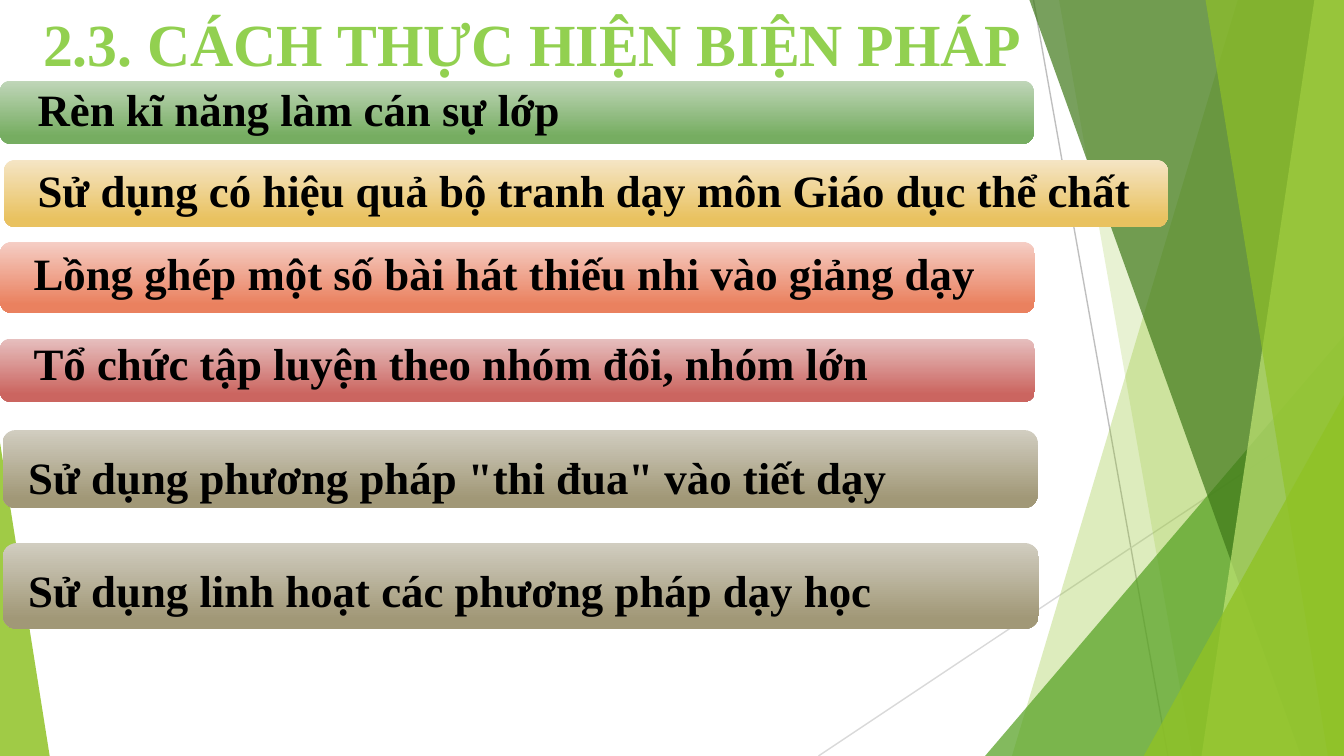
from lxml import etree
from pptx import Presentation
from pptx.dml.color import RGBColor
from pptx.enum.shapes import MSO_CONNECTOR, MSO_SHAPE
from pptx.enum.text import MSO_ANCHOR
from pptx.oxml.ns import qn
from pptx.util import Inches, Pt

STRAIGHT = MSO_CONNECTOR.STRAIGHT
TRIANGLE = MSO_SHAPE.ISOSCELES_TRIANGLE
ROUNDED = MSO_SHAPE.ROUNDED_RECTANGLE
MIDDLE = MSO_ANCHOR.MIDDLE

WIDTH = 10
HEIGHT = WIDTH * 9 / 16
FONT = "Times New Roman"
COLORS = {
    "title": "92D050", "text": "000000",
    "line": "BFBFBF", "pale_line": "D9D9D9",
    "lime": "90C226", "green": "54A021", "dark": "3F7819", "light": "C0E474",
}
GRADIENTS = {
    "green": ("C0D6B9", "76AD61"),
    "gold": ("F5E5C5", "E9C260"),
    "orange": ("F5CEC5", "EA815F"),
    "red": ("E6BFBE", "CB6560"),
    "taupe": ("D1CDC0", "A19877"),
}

# Text, gradient, bar box, left edge of the text, middle of the text line
MEASURES = [
    ("Rèn kĩ năng làm cán sự lớp", "green", (0, 0.6, 7.69, 0.47), 0.28, 0.81),
    ("Sử dụng có hiệu quả bộ tranh dạy môn Giáo dục thể chất", "gold",
     (0.03, 1.19, 8.66, 0.5), 0.28, 1.41),
    ("Lồng ghép một số bài hát thiếu nhi vào giảng dạy", "orange",
     (0, 1.8, 7.7, 0.53), 0.25, 2.03),
    ("Tổ chức tập luyện theo nhóm đôi, nhóm lớn", "red",
     (0, 2.52, 7.7, 0.47), 0.25, 2.7),
    ('Sử dụng phương pháp "thi đua" vào tiết dạy', "taupe",
     (0.02, 3.2, 7.7, 0.58), 0.21, 3.55),
    ("Sử dụng linh hoạt các phương pháp dạy học", "taupe",
     (0.02, 4.04, 7.71, 0.64), 0.21, 4.39),
]


def rgb(name):
    return RGBColor.from_string(COLORS[name])


def add_line(slide, start, end, color):
    line = slide.shapes.add_connector(STRAIGHT, *map(Inches, start + end))
    line.line.color.rgb = rgb(color)
    line.line.width = Pt(0.75)
    etree.SubElement(line._element.spPr, qn("a:effectLst"))


def fill_translucent(sp, color, opacity):
    sp.shadow.inherit = False
    sp.line.fill.background()
    sp.fill.solid()
    sp.fill.fore_color.rgb = rgb(color)
    clr = sp._element.spPr.find(qn("a:solidFill"))[0]
    etree.SubElement(clr, qn("a:alpha"), val=str(opacity * 1000))


def add_band(slide, top_x, bottom_x, color, opacity):
    """Full-height band from a slanted left edge to the right slide edge."""
    builder = slide.shapes.build_freeform(Inches(top_x), 0)
    corners = [(WIDTH, 0), (WIDTH, HEIGHT), (bottom_x, HEIGHT)]
    builder.add_line_segments([(Inches(x), Inches(y)) for x, y in corners])
    fill_translucent(builder.convert_to_shape(), color, opacity)


def add_corner(slide, left, top, width, apex, color, opacity):
    """Right triangle standing on the bottom edge of the slide."""
    sp = slide.shapes.add_shape(
        TRIANGLE, Inches(left), Inches(top), Inches(width), Inches(HEIGHT - top))
    sp.adjustments[0] = apex
    fill_translucent(sp, color, opacity)


def add_bar(slide, box, gradient):
    sp = slide.shapes.add_shape(ROUNDED, *map(Inches, box))
    sp.shadow.inherit = False
    sp.line.fill.background()
    sp.fill.gradient()
    sp.fill.gradient_angle = 270
    stops = zip(sp.fill.gradient_stops, GRADIENTS[gradient], (0, 0.88))
    for stop, color, position in stops:
        stop.color.rgb = RGBColor.from_string(color)
        stop.position = position


def add_text(slide, text, left, middle, width, height, size, color):
    sp = slide.shapes.add_textbox(
        Inches(left), Inches(middle - height / 2), Inches(width), Inches(height))
    tf = sp.text_frame
    tf.word_wrap = True
    tf.vertical_anchor = MIDDLE
    tf.margin_left = tf.margin_right = tf.margin_top = tf.margin_bottom = 0
    tf.text = text
    font = tf.paragraphs[0].runs[0].font
    font.name, font.size, font.bold = FONT, Pt(size), True
    font.color.rgb = rgb(color)


def add_background(slide):
    add_line(slide, (7.69, 0), (8.69, HEIGHT), "line")
    add_line(slide, (WIDTH, 3.02), (6.09, HEIGHT), "pale_line")
    add_band(slide, 9.21, 7.53, "lime", 30)
    add_band(slide, 7.88, 8.87, "lime", 20)
    add_corner(slide, 7.33, 2.5, 2.67, 1, "green", 72)
    add_band(slide, 7.66, 9.68, "dark", 70)
    add_band(slide, 9.78, 8.94, "light", 70)
    add_band(slide, 8.97, 9.88, "lime", 65)
    add_corner(slide, 8.51, 2.94, 1.49, 1, "lime", 80)
    add_corner(slide, 0, 3.29, 0.37, 0, "lime", 85)


def main():
    prs = Presentation()
    prs.slide_width, prs.slide_height = Inches(WIDTH), Inches(HEIGHT)
    slide = prs.slides.add_slide(prs.slide_layouts[6])

    add_background(slide)

    # Measures, one bar each
    for text, gradient, box, left, middle in MEASURES:
        add_bar(slide, box, gradient)
        right = box[0] + box[2]
        add_text(slide, text, left, middle, right - left, 0.4, 24, "text")

    # Title
    add_text(slide, "2.3. CÁCH THỰC HIỆN BIỆN PHÁP",
             0.32, 0.32, 7.39, 0.64, 32, "title")

    prs.save("out.pptx")


if __name__ == "__main__":
    main()
